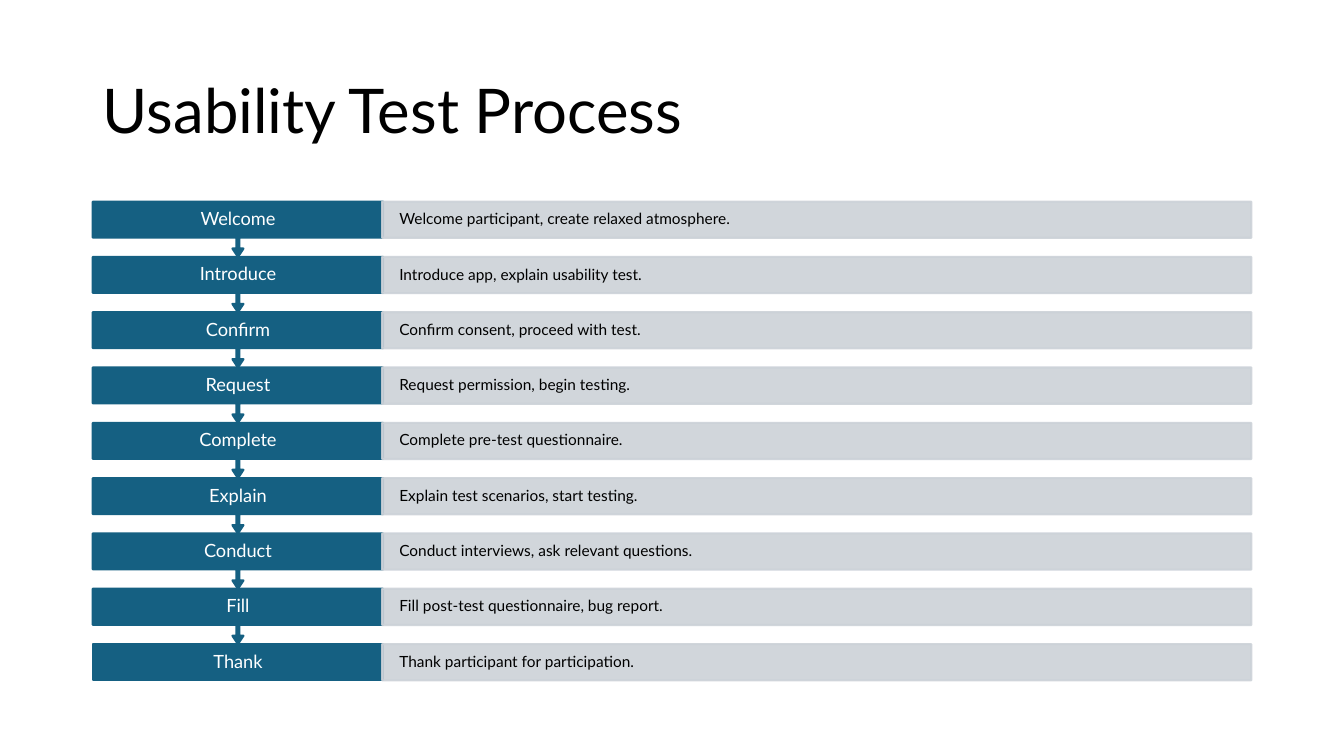
from dataclasses import dataclass

from lxml import etree
from pptx import Presentation
from pptx.dml.color import RGBColor
from pptx.enum.shapes import MSO_SHAPE
from pptx.enum.text import MSO_ANCHOR, PP_ALIGN
from pptx.oxml.ns import qn
from pptx.util import Inches, Pt

RECT = MSO_SHAPE.RECTANGLE
CALLOUT = MSO_SHAPE.DOWN_ARROW_CALLOUT
LEFT, CENTER = PP_ALIGN.LEFT, PP_ALIGN.CENTER
MIDDLE = MSO_ANCHOR.MIDDLE

FONT = "Lato"
TEAL, GREY, BLACK, WHITE = "156082", "CCD2D8", "000000", "FFFFFF"
TOP, BOTTOM = 2.0, 6.39
ROW_H = 0.36
STEP_X, STEP_W = 0.92, 2.88
NOTE_X, NOTE_W = 3.79, 8.62
ARROW = (0.05, 0.1, 0.15, 0.65)


@dataclass
class Step:
    name: str
    note: str


@dataclass
class Style:
    fill: str
    ink: str
    size: int
    align: PP_ALIGN
    pad_x: float
    pad_y: float
    alpha: int = 100


NAME = Style(TEAL, WHITE, 13, CENTER, 0.2, 0.1)
NOTE = Style(GREY, BLACK, 11, LEFT, 0.17, 0.15, 90)

STEPS = [
    Step("Welcome", "Welcome participant, create relaxed atmosphere."),
    Step("Introduce", "Introduce app, explain usability test."),
    Step("Confirm", "Confirm consent, proceed with test."),
    Step("Request", "Request permission, begin testing."),
    Step("Complete", "Complete pre-test questionnaire."),
    Step("Explain", "Explain test scenarios, start testing."),
    Step("Conduct", "Conduct interviews, ask relevant questions."),
    Step("Fill", "Fill post-test questionnaire, bug report."),
    Step("Thank", "Thank participant for participation."),
]


def color(value: str) -> RGBColor:
    return RGBColor.from_string(value)


def write(shape, text: str, size: int, ink: str, align: PP_ALIGN) -> None:
    frame = shape.text_frame
    frame.text = text
    frame.word_wrap = True
    frame.vertical_anchor = MIDDLE
    para = frame.paragraphs[0]
    para.alignment = align
    para.line_spacing = 0.9
    font = para.runs[0].font
    font.name, font.size = FONT, Pt(size)
    font.color.rgb = color(ink)


def draw_box(slide, kind, x: float, y: float, w: float, h: float,
             text: str, style: Style):
    box = slide.shapes.add_shape(kind, Inches(x), Inches(y), Inches(w), Inches(h))
    box.shadow.inherit = False
    box.fill.solid()
    box.fill.fore_color.rgb = color(style.fill)
    box.line.color.rgb = color(style.fill)
    box.line.width = Pt(1.5)
    if style.alpha < 100:
        for tint in box.element.spPr.iter(qn("a:srgbClr")):
            etree.SubElement(tint, qn("a:alpha"), val=str(style.alpha * 1000))
    write(box, text, style.size, style.ink, style.align)
    frame = box.text_frame
    frame.margin_left = frame.margin_right = Inches(style.pad_x)
    frame.margin_top = frame.margin_bottom = Inches(style.pad_y)
    return box


def draw_steps(slide) -> None:
    last = len(STEPS) - 1
    pitch = (BOTTOM - TOP) / last
    # Bottom row first, so each arrow lies over the row below it
    for i, step in reversed(list(enumerate(STEPS))):
        y = TOP + i * pitch
        kind, high = (RECT, ROW_H) if i == last else (CALLOUT, pitch)
        box = draw_box(slide, kind, STEP_X, y, STEP_W, high, step.name, NAME)
        if kind == CALLOUT:
            for k, value in enumerate(ARROW):
                box.adjustments[k] = value
        draw_box(slide, RECT, NOTE_X, y, NOTE_W, ROW_H, step.note, NOTE)


def main() -> None:
    deck = Presentation()
    deck.slide_width, deck.slide_height = Inches(13.33), Inches(7.5)
    slide = deck.slides.add_slide(deck.slide_layouts[5])

    # Title
    title = slide.shapes.title
    title.left, title.top = Inches(0.92), Inches(0.4)
    title.width, title.height = Inches(11.5), Inches(1.45)
    write(title, "Usability Test Process", 44, BLACK, LEFT)

    # Process rows
    draw_steps(slide)
    deck.save("out.pptx")


if __name__ == "__main__":
    main()
